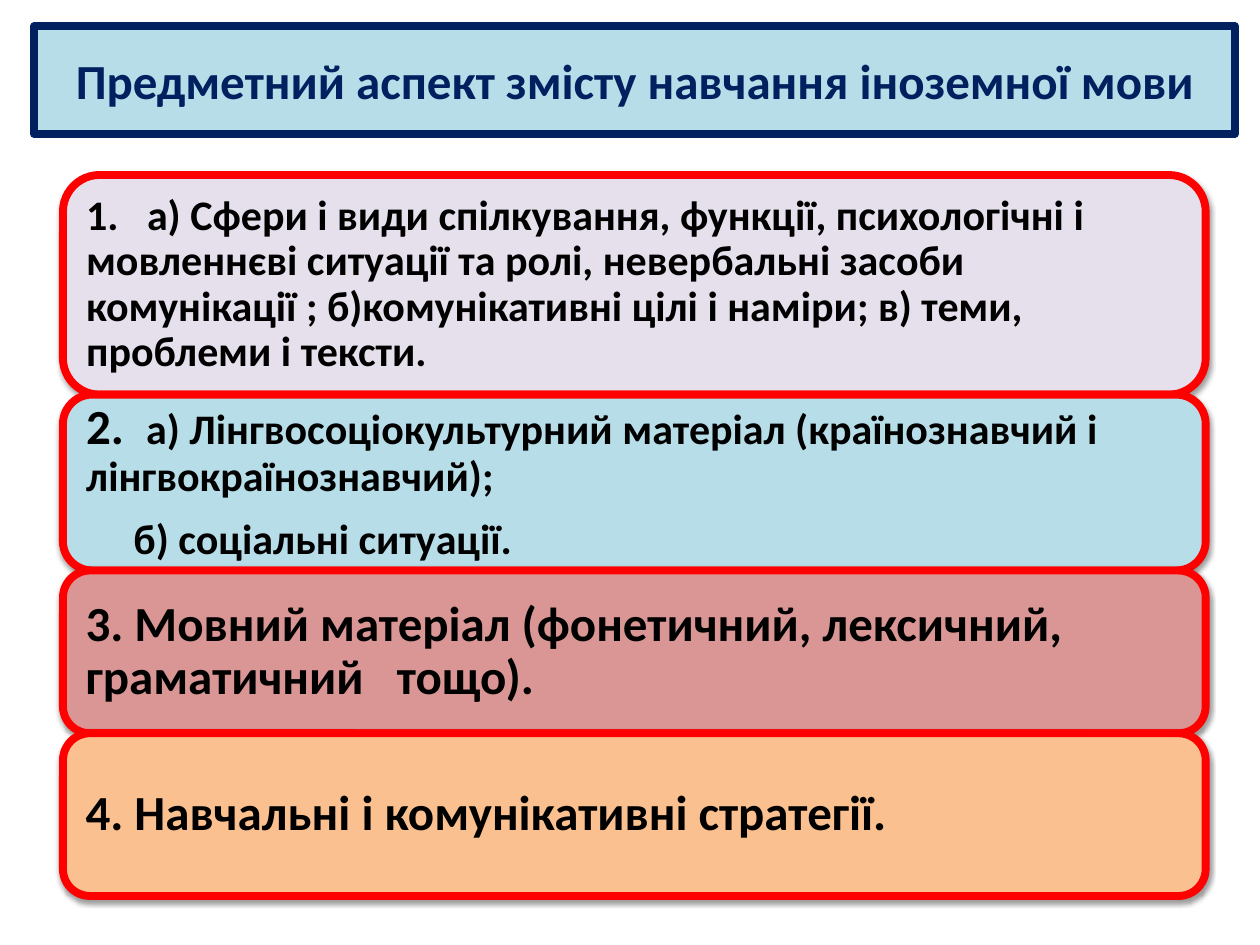
from lxml import etree
from pptx import Presentation
from pptx.dml.color import RGBColor
from pptx.enum.shapes import MSO_SHAPE
from pptx.enum.text import MSO_ANCHOR, MSO_AUTO_SIZE, PP_ALIGN
from pptx.oxml.ns import qn
from pptx.util import Pt

ROUND = MSO_SHAPE.ROUNDED_RECTANGLE
MIDDLE = MSO_ANCHOR.MIDDLE
FIXED = MSO_AUTO_SIZE.NONE
LEFT, CENTER = PP_ALIGN.LEFT, PP_ALIGN.CENTER

NAVY = RGBColor(0x00, 0x20, 0x60)
RED = RGBColor(0xFF, 0x00, 0x00)
BLACK = RGBColor(0x00, 0x00, 0x00)
LILAC = RGBColor(0xE6, 0xE0, 0xEC)
SKY = RGBColor(0xB7, 0xDE, 0xE8)
ROSE = RGBColor(0xD9, 0x96, 0x94)
PEACH = RGBColor(0xFA, 0xC0, 0x90)

TITLE = "Предметний аспект змісту навчання іноземної мови"

# Height, fill, inset, paragraphs: (indent, runs of (text, size))
BOXES = [
    (125.5, LILAC, 7.2, [
        (0, [("1.   а) Сфери і види спілкування, функції, психологічні і "
              "мовленнєві ситуації та ролі, невербальні засоби комунікації ; "
              "б)комунікативні цілі і наміри; в) теми, проблеми і тексти.", 24)]),
    ]),
    (100.5, SKY, 8.4, [
        (0, [("2.  ", 28),
             ("а) Лінгвосоціокультурний матеріал (країнознавчий і "
              "лінгвокраїнознавчий);", 24)]),
        (27, [("б) соціальні ситуації.", 24)]),
    ]),
    (93, ROSE, 8.4, [
        (0, [("3. Мовний матеріал (фонетичний, лексичний, "
              "граматичний   тощо).", 28)]),
    ]),
    (93, PEACH, 8.4, [
        (0, [("4. Навчальні і комунікативні стратегії.", 28)]),
    ]),
]
BOX_LEFT, BOX_TOP, BOX_WIDTH = 36, 100, 653


def paint(shape, fill, line):
    shape.fill.solid()
    shape.fill.fore_color.rgb = fill
    shape.line.color.rgb = line
    shape.line.width = Pt(4.5)


def add_run(para, text, size, color):
    run = para.add_run()
    run.text = text
    font = run.font
    font.name, font.size, font.bold = "Calibri", Pt(size), True
    font.color.rgb = color


def add_shadow(shape):
    """Put a soft black shadow just below the shape."""
    shape.shadow.inherit = False
    effects = shape.element.spPr.find(qn("a:effectLst"))
    outer = etree.SubElement(
        effects, qn("a:outerShdw"), blurRad=str(Pt(3.1)), dist=str(Pt(1.6)),
        dir="5400000", rotWithShape="0")
    color = etree.SubElement(outer, qn("a:srgbClr"), val=str(BLACK))
    etree.SubElement(color, qn("a:alpha"), val="38000")


def add_title(slide):
    title = slide.shapes.title
    title.left, title.top = Pt(19.5), Pt(15)
    title.width, title.height = Pt(686), Pt(61.5)
    paint(title, SKY, NAVY)
    frame = title.text_frame
    frame.auto_size = FIXED
    frame.vertical_anchor = MIDDLE
    para = frame.paragraphs[0]
    para.alignment = CENTER
    add_run(para, TITLE, 28, NAVY)


def add_box(slide, top, height, fill, inset, paras):
    box = slide.shapes.add_shape(
        ROUND, Pt(BOX_LEFT), Pt(top), Pt(BOX_WIDTH), Pt(height))
    paint(box, fill, RED)
    add_shadow(box)
    frame = box.text_frame
    frame.word_wrap = True
    frame.vertical_anchor = MIDDLE
    frame.margin_left = frame.margin_right = Pt(inset)
    frame.margin_top = frame.margin_bottom = Pt(inset)
    for i, (indent, runs) in enumerate(paras):
        para = frame.add_paragraph() if i else frame.paragraphs[0]
        para.alignment = LEFT
        para.line_spacing = 0.9
        para.space_after = Pt(10)
        if indent:
            para._p.get_or_add_pPr().set("marL", str(Pt(indent)))
        for text, size in runs:
            add_run(para, text, size, BLACK)


def main():
    deck = Presentation()
    deck.slide_width, deck.slide_height = Pt(720), Pt(540)
    slide = deck.slides.add_slide(deck.slide_layouts[5])
    add_title(slide)
    top = BOX_TOP
    for height, fill, inset, paras in BOXES:
        add_box(slide, top, height, fill, inset, paras)
        top += height
    deck.save("out.pptx")


if __name__ == "__main__":
    main()
